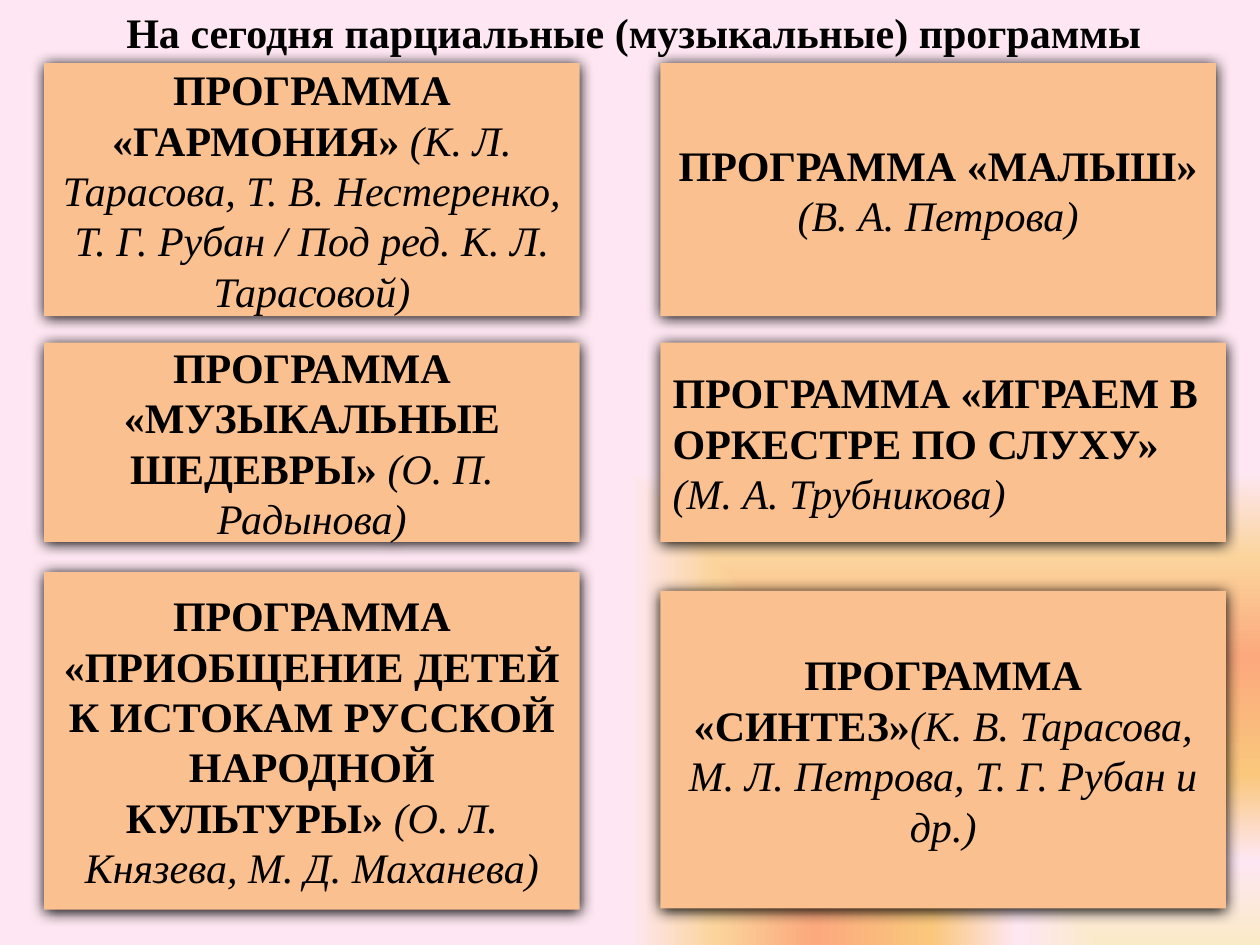
from lxml import etree
from pptx import Presentation
from pptx.dml.color import RGBColor
from pptx.enum.shapes import MSO_SHAPE
from pptx.enum.text import MSO_ANCHOR, MSO_AUTO_SIZE, PP_ALIGN
from pptx.oxml import parse_xml
from pptx.oxml.ns import qn
from pptx.util import Inches, Pt

RECTANGLE = MSO_SHAPE.RECTANGLE
MIDDLE = MSO_ANCHOR.MIDDLE
GROW = MSO_AUTO_SIZE.SHAPE_TO_FIT_TEXT
LEFT, CENTER = PP_ALIGN.LEFT, PP_ALIGN.CENTER

# Content: programme name, authors, alignment, top, width, height
TITLE = "На сегодня парциальные (музыкальные) программы"
LEFT_COLUMN = [
    ("ПРОГРАММА «ГАРМОНИЯ» ",
     "(К. Л. Тарасова, Т. В. Нестеренко, Т. Г. Рубан / Под ред. К. Л. Тарасовой)",
     CENTER, 0.5, 4.25, 2.01),
    ("ПРОГРАММА «МУЗЫКАЛЬНЫЕ ШЕДЕВРЫ» ", "(О. П. Радынова)",
     CENTER, 2.72, 4.25, 1.58),
    ("ПРОГРАММА «ПРИОБЩЕНИЕ ДЕТЕЙ К ИСТОКАМ РУССКОЙ НАРОДНОЙ КУЛЬТУРЫ» ",
     "(О. Л. Князева, М. Д. Маханева)", CENTER, 4.54, 4.25, 2.68),
]
RIGHT_COLUMN = [
    ("ПРОГРАММА «МАЛЫШ» ", "(В. А. Петрова)", CENTER, 0.5, 4.41, 2.01),
    ("ПРОГРАММА «ИГРАЕМ В ОРКЕСТРЕ ПО СЛУХУ» ", "(М. А. Трубникова)",
     LEFT, 2.72, 4.49, 1.58),
    ("ПРОГРАММА «СИНТЕЗ»",
     "(К. В. Тарасова, М. Л. Петрова, Т. Г. Рубан и др.)",
     CENTER, 4.69, 4.49, 2.52),
]
COLUMNS = [(0.35, LEFT_COLUMN), (5.24, RIGHT_COLUMN)]

THEME = {
    "text": RGBColor.from_string("000000"),
    "card": RGBColor.from_string("FAC090"),
    "shadow": "000000",
    "font": {"name": "Times New Roman", "size": Pt(24)},
    "background": [(0, "FBEAC7"), (18, "FEE7F2"), (36, "FAC77D"),
                   (61, "FBA97D"), (82, "FBD49C"), (100, "FEE7F2")],
}
BOLD = {"bold": True, "italic": False}
ITALIC = {"bold": False, "italic": True}


def paint_background(page):
    """Rectangular gradient that spreads from the bottom right corner."""
    stops = "".join(
        f'<a:gs pos="{place * 1000}"><a:srgbClr val="{color}"/></a:gs>'
        for place, color in THEME["background"])
    background = parse_xml(
        '<p:bg xmlns:p="http://schemas.openxmlformats.org/presentationml/2006/main"'
        ' xmlns:a="http://schemas.openxmlformats.org/drawingml/2006/main">'
        f'<p:bgPr><a:gradFill><a:gsLst>{stops}</a:gsLst><a:path path="rect">'
        '<a:fillToRect l="100000" t="100000"/></a:path></a:gradFill>'
        '<a:effectLst/></p:bgPr></p:bg>')
    page.element.cSld.insert(0, background)


def write(frame, spans, align):
    frame.word_wrap = True
    para = frame.paragraphs[0]
    para.alignment = align
    for text, style in spans:
        span = para.add_run()
        span.text = text
        for key, value in {**THEME["font"], **style}.items():
            setattr(span.font, key, value)
        span.font.color.rgb = THEME["text"]


def add_shadow(box):
    box.shadow.inherit = False
    effects = box.element.spPr.find(qn("a:effectLst"))
    shadow = etree.SubElement(
        effects, qn("a:outerShdw"), blurRad=str(Pt(8.5)), dist=str(Pt(1)),
        dir="5400000", algn="t", rotWithShape="0")
    etree.SubElement(shadow, qn("a:srgbClr"), val=THEME["shadow"])


def add_card(page, left, card):
    name, authors, align, *sizes = card
    top, width, height = map(Inches, sizes)
    box = page.shapes.add_shape(RECTANGLE, Inches(left), top, width, height)
    box.fill.solid()
    box.fill.fore_color.rgb = THEME["card"]
    box.line.fill.background()
    add_shadow(box)
    box.text_frame.vertical_anchor = MIDDLE
    write(box.text_frame, [(name, BOLD), (authors, ITALIC)], align)


def main():
    deck = Presentation()
    deck.slide_width, deck.slide_height = Inches(10), Inches(7.5)
    page = deck.slides.add_slide(deck.slide_layouts[6])
    paint_background(page)

    # Heading
    heading = page.shapes.add_textbox(
        Inches(0.03), Inches(0), Inches(10), Inches(0.5))
    write(heading.text_frame, [(TITLE, BOLD)], CENTER)
    heading.text_frame.auto_size = GROW

    # Programme cards in two columns
    for left, cards in COLUMNS:
        for card in cards:
            add_card(page, left, card)

    deck.save("out.pptx")


if __name__ == "__main__":
    main()
